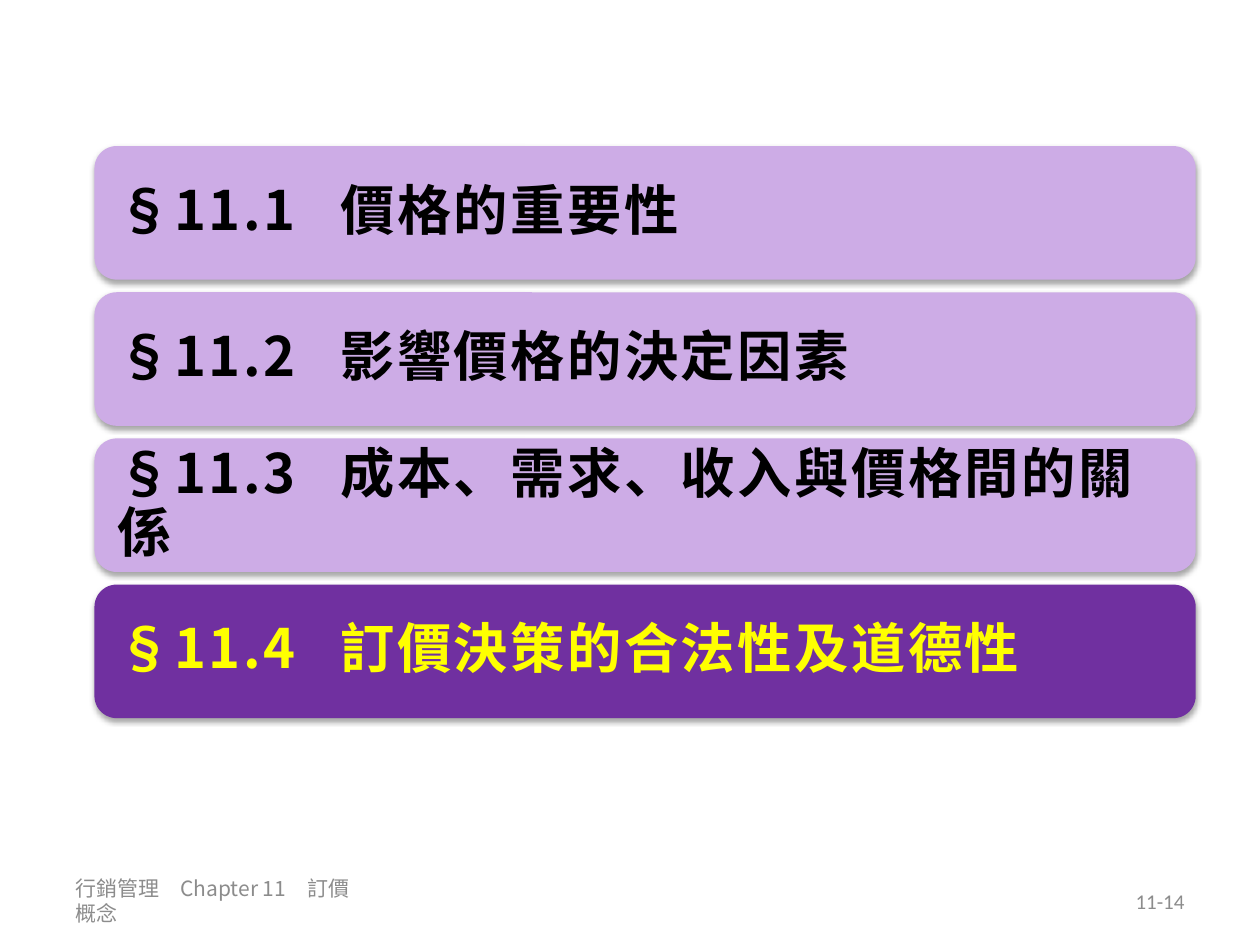
from dataclasses import dataclass

from lxml.etree import SubElement
from pptx import Presentation
from pptx.dml.color import RGBColor
from pptx.enum.shapes import MSO_SHAPE
from pptx.enum.text import MSO_ANCHOR, PP_ALIGN
from pptx.oxml.ns import qn
from pptx.util import Inches, Pt

LILAC = RGBColor(0xCD, 0xAC, 0xE6)
PURPLE = RGBColor(0x70, 0x30, 0xA0)
BLACK = RGBColor(0x00, 0x00, 0x00)
YELLOW = RGBColor(0xFF, 0xFF, 0x00)
GRAY = RGBColor(0x8C, 0x8C, 0x8C)
CJK_FONT = "Noto Sans CJK SC"
LATIN_FONT = "Calibri"
BAR_LEFT, BAR_TOP, BAR_WIDTH, BAR_HEIGHT, BAR_PITCH = 0.75, 1.16, 8.74, 1.06, 1.16
TITLE_TAB = 1.77


@dataclass
class Section:
    number: str
    title: str
    fill: RGBColor = LILAC
    color: RGBColor = BLACK


@dataclass
class Footer:
    text: str
    left: float
    width: float
    font: str
    align: PP_ALIGN


SECTIONS = [
    Section("§11.1", "價格的重要性"),
    Section("§11.2", "影響價格的決定因素"),
    Section("§11.3", "成本、需求、收入與價格間的關係"),
    Section("§11.4", "訂價決策的合法性及道德性", PURPLE, YELLOW),
]
FOOTERS = [
    Footer("行銷管理　Chapter 11　訂價概念", 0.5, 2.45, CJK_FONT, PP_ALIGN.LEFT),
    Footer("11-14", 7.17, 2.33, LATIN_FONT, PP_ALIGN.RIGHT),
]


def style_span(span, size: float, font: str, color: RGBColor) -> None:
    span.font.size = Pt(size)
    span.font.name = font
    span.font.color.rgb = color
    SubElement(span.font._element, qn("a:ea"), typeface=CJK_FONT)


def add_shadow(shape) -> None:
    shape.shadow.inherit = False
    effects = shape._element.spPr.find(qn("a:effectLst"))
    shadow = SubElement(effects, qn("a:outerShdw"), blurRad=str(Pt(3.1)),
                        dist=str(Pt(1.8)), dir="5400000", rotWithShape="0")
    color = SubElement(shadow, qn("a:srgbClr"), val="000000")
    SubElement(color, qn("a:alpha"), val="35000")


def add_section(page, section: Section, index: int) -> None:
    bar = page.shapes.add_shape(
        MSO_SHAPE.ROUNDED_RECTANGLE, Inches(BAR_LEFT), Inches(BAR_TOP + index * BAR_PITCH),
        Inches(BAR_WIDTH), Inches(BAR_HEIGHT))
    bar.fill.solid()
    bar.fill.fore_color.rgb = section.fill
    bar.line.fill.background()
    add_shadow(bar)

    frame = bar.text_frame
    frame.word_wrap = True
    frame.vertical_anchor = MSO_ANCHOR.MIDDLE
    frame.margin_left = frame.margin_right = Inches(0.13)
    frame.margin_top = frame.margin_bottom = Inches(0.13)
    para = frame.paragraphs[0]
    para.alignment = PP_ALIGN.LEFT
    para.line_spacing = 0.9
    para.space_after = Pt(11)
    tabs = SubElement(para._p.get_or_add_pPr(), qn("a:tabLst"))
    SubElement(tabs, qn("a:tab"), pos=str(Inches(TITLE_TAB)), algn="l")
    for text, font in ((section.number + "\t", CJK_FONT), (section.title, LATIN_FONT)):
        span = para.add_run()
        span.text = text
        style_span(span, 31, font, section.color)
        span.font.bold = True
        span.font._element.set("spc", "150")


def add_footer(page, footer: Footer) -> None:
    box = page.shapes.add_textbox(
        Inches(footer.left), Inches(6.95), Inches(footer.width), Inches(0.4))
    frame = box.text_frame
    frame.word_wrap = True
    frame.vertical_anchor = MSO_ANCHOR.MIDDLE
    frame.text = footer.text
    para = frame.paragraphs[0]
    para.alignment = footer.align
    style_span(para.runs[0], 12, footer.font, GRAY)


def main() -> None:
    deck = Presentation()
    deck.slide_width, deck.slide_height = Inches(10), Inches(7.5)
    page = deck.slides.add_slide(deck.slide_layouts[6])
    for footer in FOOTERS:
        add_footer(page, footer)
    for index, section in enumerate(SECTIONS):
        add_section(page, section, index)
    deck.save("out.pptx")


if __name__ == "__main__":
    main()
